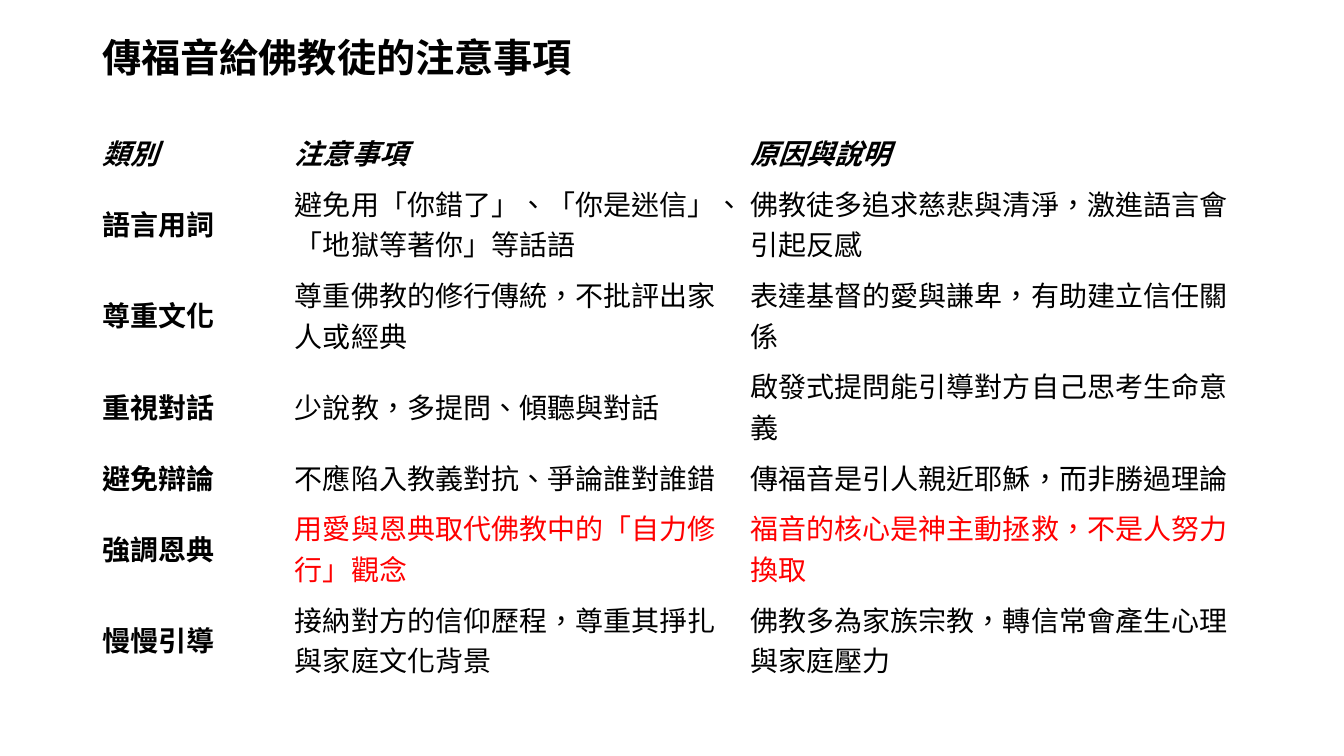
from dataclasses import dataclass

from pptx import Presentation
from pptx.dml.color import RGBColor
from pptx.enum.lang import MSO_LANGUAGE_ID
from pptx.enum.text import MSO_ANCHOR
from pptx.slide import Slide
from pptx.text.text import TextFrame
from pptx.util import Pt


@dataclass(frozen=True)
class Theme:
    """Colours, font and type sizes."""
    font: str = "Calibri"
    ink: RGBColor = RGBColor(0, 0, 0)
    alert: RGBColor = RGBColor(255, 0, 0)
    title: float = 28
    body: float = 20


@dataclass(frozen=True)
class Entry:
    """One table row with its height and emphasis."""
    topic: str
    advice: str
    reason: str
    high: float = 65.2
    head: bool = False
    alert: bool = False


THEME = Theme()
LEFT = 66
SHORT = 36.2
COLS = (137.5, 325.5, 373.7)
ROWS = (
    Entry("類別", "注意事項", "原因與說明", high=SHORT, head=True),
    Entry("語言用詞", "避免用「你錯了」、「你是迷信」、「地獄等著你」等話語",
          "佛教徒多追求慈悲與清淨，激進語言會引起反感"),
    Entry("尊重文化", "尊重佛教的修行傳統，不批評出家人或經典",
          "表達基督的愛與謙卑，有助建立信任關係"),
    Entry("重視對話", "少說教，多提問、傾聽與對話",
          "啟發式提問能引導對方自己思考生命意義"),
    Entry("避免辯論", "不應陷入教義對抗、爭論誰對誰錯",
          "傳福音是引人親近耶穌，而非勝過理論", high=SHORT),
    Entry("強調恩典", "用愛與恩典取代佛教中的「自力修行」觀念",
          "福音的核心是神主動拯救，不是人努力換取", alert=True),
    Entry("慢慢引導", "接納對方的信仰歷程，尊重其掙扎與家庭文化背景",
          "佛教多為家族宗教，轉信常會產生心理與家庭壓力"),
)


def write(frame: TextFrame, text: str, size: float, color: RGBColor,
          bold: bool, slant: bool = False) -> None:
    """Fill a text frame and format its runs."""
    frame.text = text
    frame.word_wrap = True
    for run in frame.paragraphs[0].runs:
        font = run.font
        font.name, font.size = THEME.font, Pt(size)
        font.bold, font.italic = bold, slant
        font.color.rgb = color
        font.language_id = MSO_LANGUAGE_ID.TRADITIONAL_CHINESE


def add_title(slide: Slide, text: str) -> None:
    """Add the slide heading."""
    box = slide.shapes.add_textbox(Pt(LEFT), Pt(14.4), Pt(828), Pt(57))
    frame = box.text_frame
    write(frame, text, THEME.title, THEME.ink, True)
    frame.vertical_anchor = MSO_ANCHOR.MIDDLE
    frame.paragraphs[0].line_spacing = 0.9


def add_grid(slide: Slide, rows: tuple[Entry, ...]) -> None:
    """Add the table of advice."""
    high = sum(row.high for row in rows)
    grid = slide.shapes.add_table(len(rows), len(COLS), Pt(LEFT), Pt(90.7),
                                  Pt(sum(COLS)), Pt(high)).table
    grid.first_row = grid.horz_banding = False
    for col, wide in zip(grid.columns, COLS):
        col.width = Pt(wide)
    for line, row in zip(grid.rows, rows):
        line.height = Pt(row.high)
        for num, text in enumerate((row.topic, row.advice, row.reason)):
            cell = line.cells[num]
            cell.fill.background()
            cell.vertical_anchor = MSO_ANCHOR.MIDDLE
            color = THEME.alert if row.alert and num else THEME.ink
            write(cell.text_frame, text, THEME.body, color,
                  row.head or num == 0, row.head)


def main() -> None:
    """Build and save the slide."""
    deck = Presentation()
    deck.slide_width, deck.slide_height = Pt(960), Pt(540)
    slide = deck.slides.add_slide(deck.slide_layouts[6])
    add_title(slide, "傳福音給佛教徒的注意事項")
    add_grid(slide, ROWS)
    deck.save("out.pptx")


if __name__ == "__main__":
    main()
